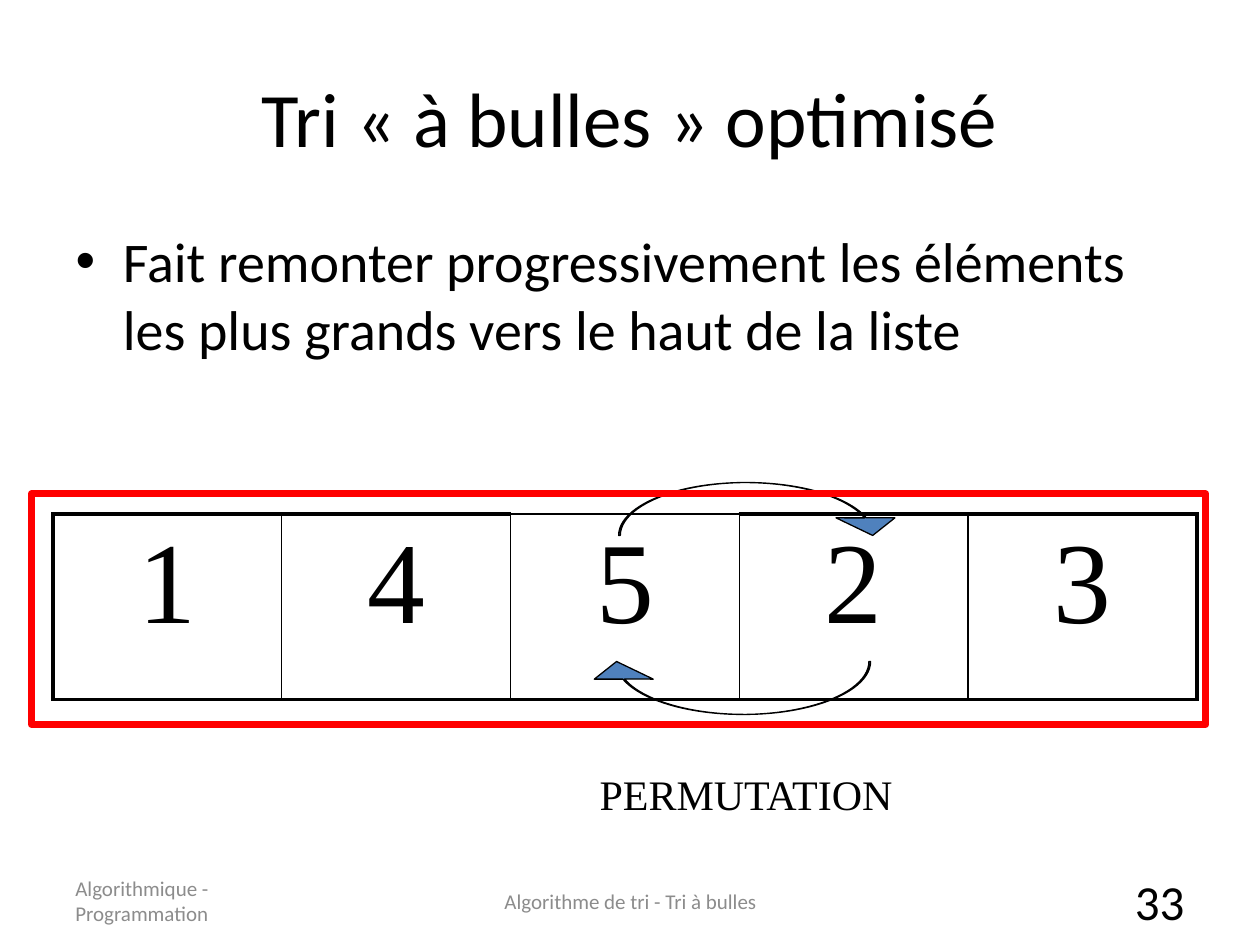
from dataclasses import dataclass

from lxml.etree import SubElement
from pptx import Presentation
from pptx.dml.color import RGBColor
from pptx.enum.shapes import MSO_SHAPE
from pptx.enum.text import MSO_ANCHOR, PP_ALIGN
from pptx.oxml.ns import qn
from pptx.util import Inches, Pt

COLORS = {"text": "000000", "arrow": "4F81BD", "frame": "FF0000", "footer": "8C8C8C"}
THIN, THICK = 1, 2.25
VALUES = ["1", "4", "5", "2", "3"]
CURRENT = 2  # cell being compared, drawn with a thin top border


@dataclass
class Label:
    text: str
    left: float
    top: float
    width: float
    height: float
    size: int
    font: str = "Calibri"
    color: str = "text"
    align: PP_ALIGN = PP_ALIGN.LEFT
    anchor: MSO_ANCHOR = MSO_ANCHOR.MIDDLE
    wrap: bool = True


@dataclass
class SwapArrow:
    left: float
    top: float
    flip: str


LABELS = [
    Label("PERMUTATION", 4.66, 6.05, 2.59, 0.5, 24, "Times New Roman",
          anchor=MSO_ANCHOR.TOP, wrap=False),
    Label("Algorithmique - Programmation", 0.5, 6.95, 2.33, 0.4, 12, color="footer"),
    Label("Algorithme de tri - Tri à bulles", 3.42, 6.95, 3.17, 0.4, 12,
          color="footer", align=PP_ALIGN.CENTER),
    Label("33", 7.17, 6.95, 2.33, 0.4, 28, align=PP_ALIGN.RIGHT),
]
ARROWS = [SwapArrow(4.91, 3.83, "flipV"), SwapArrow(4.66, 5.25, "flipH")]


def rgb(name: str) -> RGBColor:
    return RGBColor.from_string(COLORS[name])


def format_run(p, size: float, font: str = "Calibri", color: str = "text") -> None:
    f = p.runs[0].font
    f.size, f.name = Pt(size), font
    f.color.rgb = rgb(color)


def fill_placeholder(ph, text: str, box: tuple, size: int) -> None:
    ph.left, ph.top, ph.width, ph.height = map(Inches, box)
    ph.text_frame.text = text
    format_run(ph.text_frame.paragraphs[0], size)


def add_label(s, label: Label) -> None:
    tb = s.shapes.add_textbox(Inches(label.left), Inches(label.top),
                              Inches(label.width), Inches(label.height))
    tf = tb.text_frame
    tf.word_wrap, tf.vertical_anchor = label.wrap, label.anchor
    tf.text = label.text
    p = tf.paragraphs[0]
    p.alignment = label.align
    format_run(p, label.size, label.font, label.color)


def set_borders(cell, widths: dict) -> None:
    tc_pr = cell._tc.get_or_add_tcPr()
    for side, width in widths.items():
        ln = SubElement(tc_pr, qn(f"a:ln{side}"), w=str(Pt(width)))
        fill = SubElement(ln, qn("a:solidFill"))
        SubElement(fill, qn("a:srgbClr"), val=COLORS["text"])


def set_space_before(p, percent: int) -> None:
    p_pr = p._p.get_or_add_pPr()
    space = SubElement(p_pr, qn("a:spcBef"))
    SubElement(space, qn("a:spcPct"), val=str(percent * 1000))


def add_list_table(s) -> None:
    table = s.shapes.add_table(1, len(VALUES), Inches(0.42), Inches(4.08),
                               Inches(9.08), Inches(1.47)).table
    table.first_row = table.horz_banding = False
    last = len(VALUES) - 1
    for i, value in enumerate(VALUES):
        cell = table.cell(0, i)
        cell.text = value
        p = cell.text_frame.paragraphs[0]
        p.alignment = PP_ALIGN.CENTER
        set_space_before(p, 20)
        format_run(p, 66, "Times New Roman")
        set_borders(cell, {"L": THICK if i == 0 else THIN,
                           "R": THICK if i == last else THIN,
                           "T": THIN if i == CURRENT else THICK,
                           "B": THICK})
        cell.fill.background()


def add_swap_arrow(s, arrow: SwapArrow) -> None:
    sp = s.shapes.add_shape(MSO_SHAPE.CURVED_UP_ARROW, Inches(arrow.left),
                            Inches(arrow.top), Inches(2.25), Inches(0.42))
    for i, value in enumerate((0.032, 1.112, 0.333)):
        sp.adjustments[i] = value
    sp._element.spPr.find(qn("a:xfrm")).set(arrow.flip, "1")
    sp.shadow.inherit = False
    sp.fill.solid()
    sp.fill.fore_color.rgb = rgb("arrow")
    sp.line.color.rgb = rgb("text")
    sp.line.width = Pt(0.75)


def add_frame(s) -> None:
    sp = s.shapes.add_shape(MSO_SHAPE.RECTANGLE, Inches(0.25), Inches(3.92),
                            Inches(9.32), Inches(1.83))
    sp.shadow.inherit = False
    sp.fill.background()
    sp.line.color.rgb = rgb("frame")
    sp.line.width = Pt(4)


def main() -> None:
    prs = Presentation()
    prs.slide_width, prs.slide_height = Inches(10), Inches(7.5)
    s = prs.slides.add_slide(prs.slide_layouts[1])

    # Title and bullet
    fill_placeholder(s.shapes.title, "Tri « à bulles » optimisé", (0.5, 0.3, 9, 1.25), 44)
    fill_placeholder(
        s.placeholders[1],
        "Fait remonter progressivement les éléments les plus grands vers le haut de la liste",
        (0.5, 1.75, 9, 4.95), 32)

    # List being sorted, with the swap arrows
    add_list_table(s)
    for arrow in ARROWS:
        add_swap_arrow(s, arrow)

    # Caption and footer
    for label in LABELS:
        add_label(s, label)

    # Frame around the unsorted part
    add_frame(s)
    prs.save("out.pptx")


if __name__ == "__main__":
    main()
